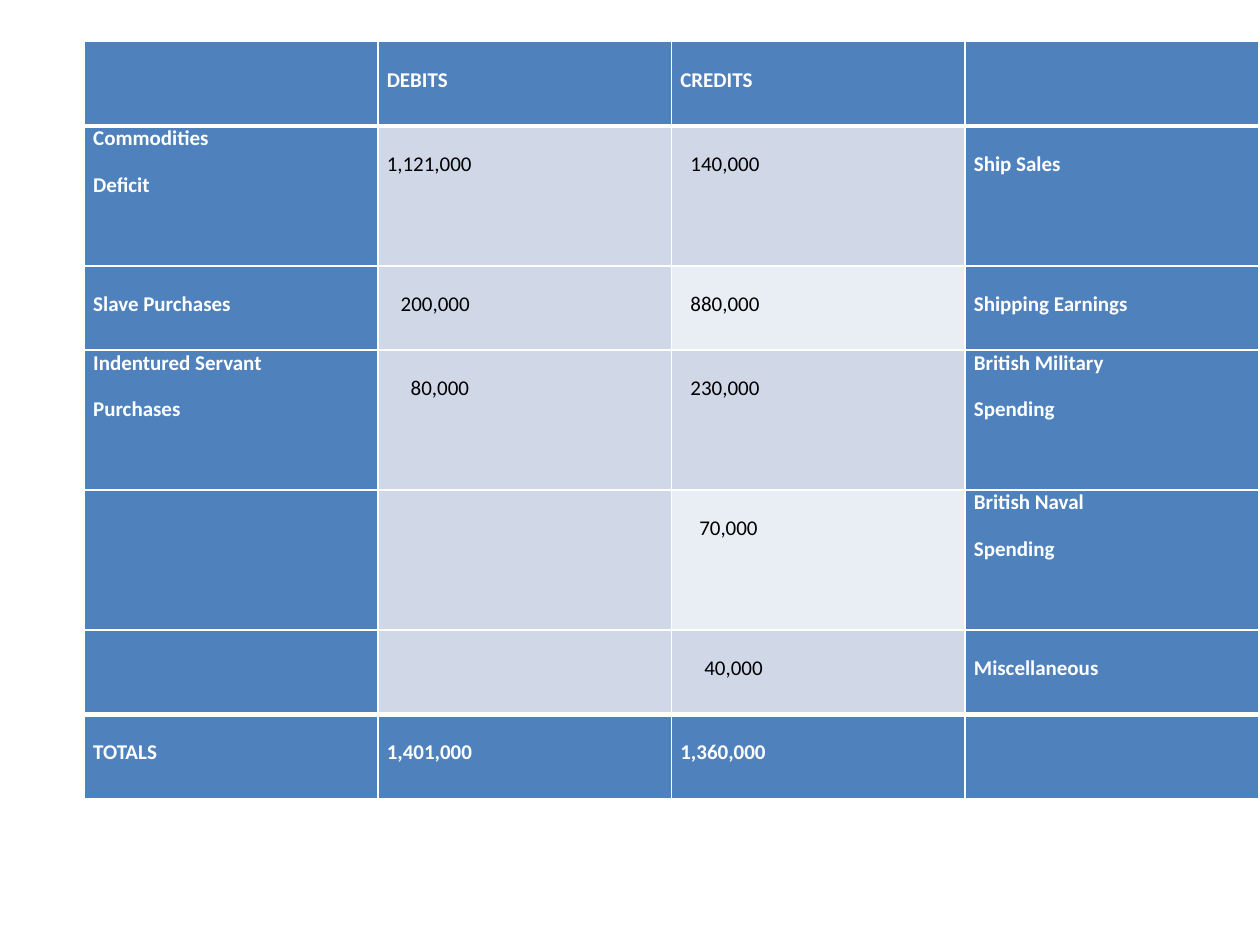
"""Build a slide with a balance of payments table of debits and credits."""
import pptx
import pptx.util
import pptx.dml.color
import lxml.etree
import pptx.oxml.ns

Inches, Pt = pptx.util.Inches, pptx.util.Pt
COLORS = {"label": "4F81BD", "band": "D0D8E8", "light": "E9EDF4",
          "white": "FFFFFF", "black": "000000"}
ROWS = [
    ["", "DEBITS", "CREDITS", ""],
    ["Commodities\nDeficit", "1,121,000", "140,000", "Ship Sales"],
    ["Slave Purchases", "200,000", "880,000", "Shipping Earnings"],
    ["Indentured Servant\nPurchases", "80,000", "230,000", "British Military\nSpending"],
    ["", "", "70,000", "British Naval\nSpending"],
    ["", "", "40,000", "Miscellaneous"],
    ["TOTALS", "1,401,000", "1,360,000", ""],
]
HEIGHTS = [0.67, 1.11, 0.67, 1.11, 1.11, 0.67, 0.67]
INDENTS = {(1, 2): 0.08, (2, 1): 0.11, (2, 2): 0.08, (3, 1): 0.19,
           (3, 2): 0.08, (4, 2): 0.15, (5, 2): 0.19}
LAST_ROW = len(ROWS) - 1


def rgb(name):
    return pptx.dml.color.RGBColor.from_string(COLORS[name])


def add_border(cell, side, points):
    properties = cell._tc.get_or_add_tcPr()
    line = lxml.etree.SubElement(properties, pptx.oxml.ns.qn(f"a:ln{side}"), w=str(Pt(points)))
    fill = lxml.etree.SubElement(line, pptx.oxml.ns.qn("a:solidFill"))
    lxml.etree.SubElement(fill, pptx.oxml.ns.qn("a:srgbClr"), val=COLORS["white"])


deck = pptx.Presentation()
deck.slide_width, deck.slide_height = Inches(10), Inches(7.5)
page = deck.slides.add_slide(deck.slide_layouts[6])
table = page.shapes.add_table(len(ROWS), 4, Inches(0.67), Inches(0.33),
                              Inches(9.33), Inches(6)).table
for column in table.columns:
    column.width = Inches(2.33)

for row, (height, texts) in enumerate(zip(HEIGHTS, ROWS)):
    table.rows[row].height = Inches(height)
    for column, text in enumerate(texts):
        cell = table.cell(row, column)
        is_label = row in (0, LAST_ROW) or column in (0, 3)
        cell.margin_left = Inches(0.07 + INDENTS.get((row, column), 0))
        cell.margin_right = Inches(0.07)
        cell.margin_top = cell.margin_bottom = 0

        add_border(cell, "L", 1)
        add_border(cell, "R", 1)
        add_border(cell, "T", 3 if row in (1, LAST_ROW) else 1)
        add_border(cell, "B", 3 if row in (0, LAST_ROW - 1) else 1)
        is_light = column == 2 and row % 2 == 0
        shade = "label" if is_label else "light" if is_light else "band"
        cell.fill.solid()
        cell.fill.fore_color.rgb = rgb(shade)

        cell.text_frame.text = text
        for para in cell.text_frame.paragraphs:
            para.space_after = Pt(12)
            para.line_spacing = 1.0 if "\n" in text else 2.0
            for span in para.runs:
                span.font.name = "Calibri"
                span.font.size = Pt(12)
                span.font.bold = is_label
                span.font.color.rgb = rgb("white" if is_label else "black")

deck.save("out.pptx")
